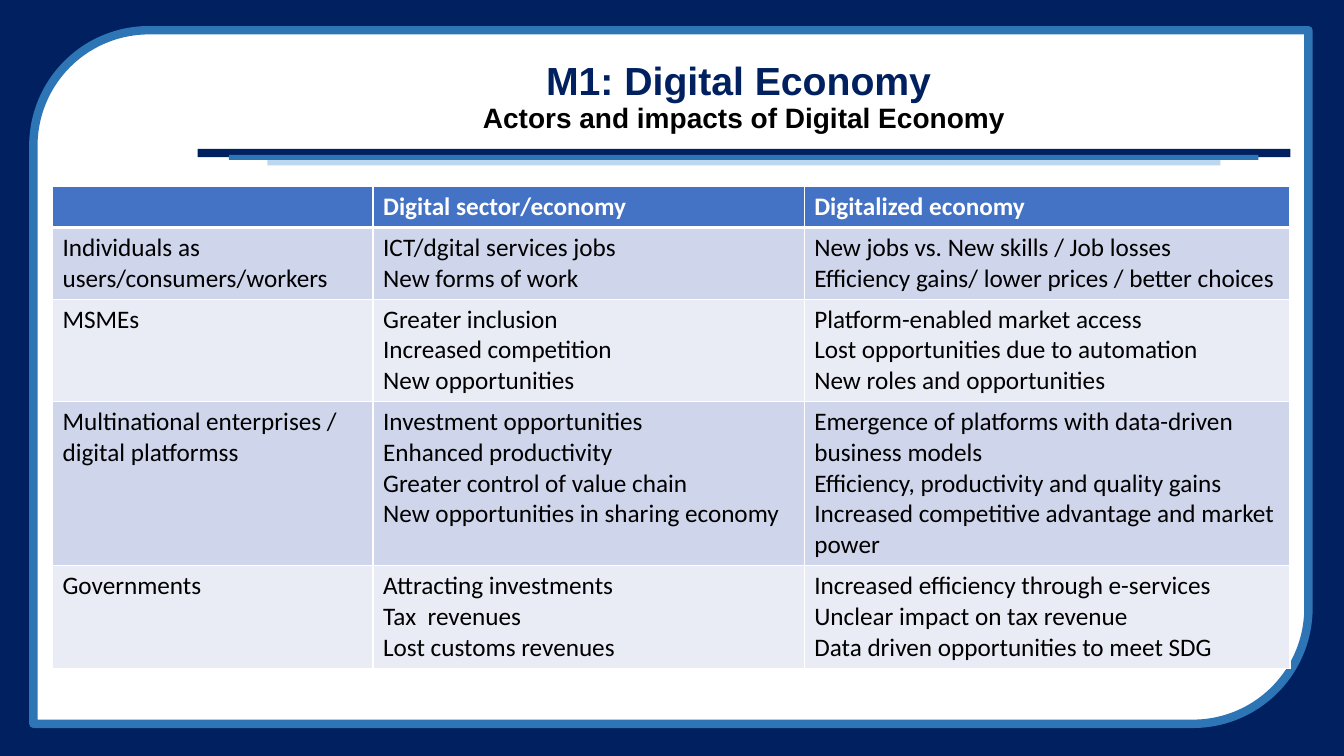
import pptx
import pptx.util
import pptx.dml.color
import pptx.enum.shapes
import pptx.enum.text
import pptx.oxml.ns
import lxml.etree

Pt = pptx.util.Pt
RGBColor = pptx.dml.color.RGBColor
qn = pptx.oxml.ns.qn
SHAPES = pptx.enum.shapes.MSO_SHAPE

NAVY = RGBColor(0x00, 0x20, 0x60)
BLUE = RGBColor(0x2E, 0x75, 0xB6)
PALE_BLUE = RGBColor(0xBD, 0xD7, 0xEE)
HEADER_BLUE = RGBColor(0x44, 0x72, 0xC4)
BAND_DARK = RGBColor(0xCF, 0xD5, 0xEA)
BAND_LIGHT = RGBColor(0xE9, 0xEB, 0xF5)
WHITE = RGBColor(0xFF, 0xFF, 0xFF)
BLACK = RGBColor(0x00, 0x00, 0x00)

TITLE = "M1: Digital Economy "
SUBTITLE = "Actors and impacts of Digital Economy"

HEADER = [[], ["Digital sector/economy"], ["Digitalized economy"]]
ACTORS = [
    [["Individuals as users/consumers/workers"],
     ["ICT/dgital services jobs", "New forms of work"],
     ["New jobs vs. New skills / Job losses",
      "Efficiency gains/ lower prices / better choices"]],
    [["MSMEs"],
     ["Greater inclusion", "Increased competition", "New opportunities"],
     ["Platform-enabled market access", "Lost opportunities due to automation",
      "New roles and opportunities"]],
    [["Multinational enterprises / digital platformss"],
     ["Investment opportunities", "Enhanced productivity",
      "Greater control of value chain", "New opportunities in sharing economy"],
     ["Emergence of platforms with data-driven business models",
      "Efficiency, productivity and quality gains",
      "Increased competitive advantage and market power"]],
    [["Governments"],
     ["Attracting investments", "Tax  revenues", "Lost customs revenues"],
     ["Increased efficiency through e-services", "Unclear impact on tax revenue",
      "Data driven opportunities to meet SDG"]],
]
ROW_LINES = [1, 2, 3, 5, 3]
COLUMN_WIDTHS = [229, 308, 347]
LINE_HEIGHT, CELL_PADDING = 22, 7.2

SLIDE_WIDTH, SLIDE_HEIGHT = 960, 540
TITLE_LEFT, TITLE_WIDTH = 141.2, 780.5
# left inset from the title's edge, right inset, top, height, colour
RULES = [
    (0, 0, 106.3, 6, NAVY),
    (22.3, 22.8, 110.6, 3.6, BLUE),
    (49.7, 50, 114.4, 3.8, PALE_BLUE),
]


def add_block(slide, kind, left, top, width, height, fill, line=None):
    shape = slide.shapes.add_shape(kind, Pt(left), Pt(top), Pt(width), Pt(height))
    shape.shadow.inherit = False
    shape.fill.solid()
    shape.fill.fore_color.rgb = fill
    if line is None:
        shape.line.fill.background()
    else:
        shape.line.color.rgb = line
        shape.line.width = Pt(6)


def add_text(paragraph, text, size=18, font="Calibri", color=BLACK, bold=False):
    run = paragraph.add_run()
    run.text = text
    run.font.size = Pt(size)
    run.font.name = font
    run.font.color.rgb = color
    run.font.bold = bold


def set_borders(cell, widths):
    """Draw white cell borders; widths maps a side (L, R, T, B) to points."""
    properties = cell._tc.get_or_add_tcPr()
    for side, width in widths.items():
        line = lxml.etree.SubElement(properties, qn(f"a:ln{side}"), w=str(Pt(width)))
        fill = lxml.etree.SubElement(line, qn("a:solidFill"))
        lxml.etree.SubElement(fill, qn("a:srgbClr"), val=str(WHITE))


def add_title(slide):
    title = slide.shapes.title
    title.left, title.top = Pt(TITLE_LEFT), Pt(35.3)
    title.width, title.height = Pt(TITLE_WIDTH), Pt(69.8)
    frame = title.text_frame
    frame.auto_size = pptx.enum.text.MSO_AUTO_SIZE.NONE
    frame.word_wrap = True
    frame.vertical_anchor = pptx.enum.text.MSO_ANCHOR.MIDDLE
    paragraph = frame.paragraphs[0]
    paragraph.alignment = pptx.enum.text.PP_ALIGN.CENTER
    paragraph.line_spacing = 0.9
    add_text(paragraph, TITLE, size=28, font="Arial", color=NAVY, bold=True)
    paragraph.add_line_break()
    add_text(paragraph, SUBTITLE, size=20, font="Arial", bold=True)


def add_actor_table(slide):
    rows = [HEADER] + ACTORS
    heights = [CELL_PADDING + LINE_HEIGHT * lines for lines in ROW_LINES]
    table = slide.shapes.add_table(
        len(rows), len(COLUMN_WIDTHS), Pt(37.5), Pt(133.3),
        Pt(sum(COLUMN_WIDTHS)), Pt(sum(heights))).table
    for column, width in zip(table.columns, COLUMN_WIDTHS):
        column.width = Pt(width)
    for row_index, (row, height) in enumerate(zip(rows, heights)):
        table.rows[row_index].height = Pt(height)
        is_header = row_index == 0
        band = BAND_DARK if row_index % 2 else BAND_LIGHT
        for column_index, lines in enumerate(row):
            cell = table.cell(row_index, column_index)
            set_borders(cell, {"L": 1, "R": 1, "T": 3 if row_index == 1 else 1,
                               "B": 3 if is_header else 1})
            cell.fill.solid()
            cell.fill.fore_color.rgb = HEADER_BLUE if is_header else band
            frame = cell.text_frame
            for line_index, text in enumerate(lines):
                paragraph = frame.add_paragraph() if line_index else frame.paragraphs[0]
                add_text(paragraph, text, color=WHITE if is_header else BLACK,
                         bold=is_header)


def main():
    presentation = pptx.Presentation()
    presentation.slide_width = Pt(SLIDE_WIDTH)
    presentation.slide_height = Pt(SLIDE_HEIGHT)
    slide = presentation.slides.add_slide(presentation.slide_layouts[5])
    slide.background.fill.solid()
    slide.background.fill.fore_color.rgb = NAVY

    add_block(slide, SHAPES.ROUND_2_DIAG_RECTANGLE, 23.8, 21.6, 910.8, 495.4,
              WHITE, line=BLUE)
    for inset_left, inset_right, top, height, color in RULES:
        add_block(slide, SHAPES.RECTANGLE, TITLE_LEFT + inset_left, top,
                  TITLE_WIDTH - inset_left - inset_right, height, color)
    # The title placeholder comes first in the tree; bring it above the frame.
    slide.shapes._spTree.append(slide.shapes.title._element)
    add_title(slide)
    add_actor_table(slide)
    presentation.save("out.pptx")


if __name__ == "__main__":
    main()
